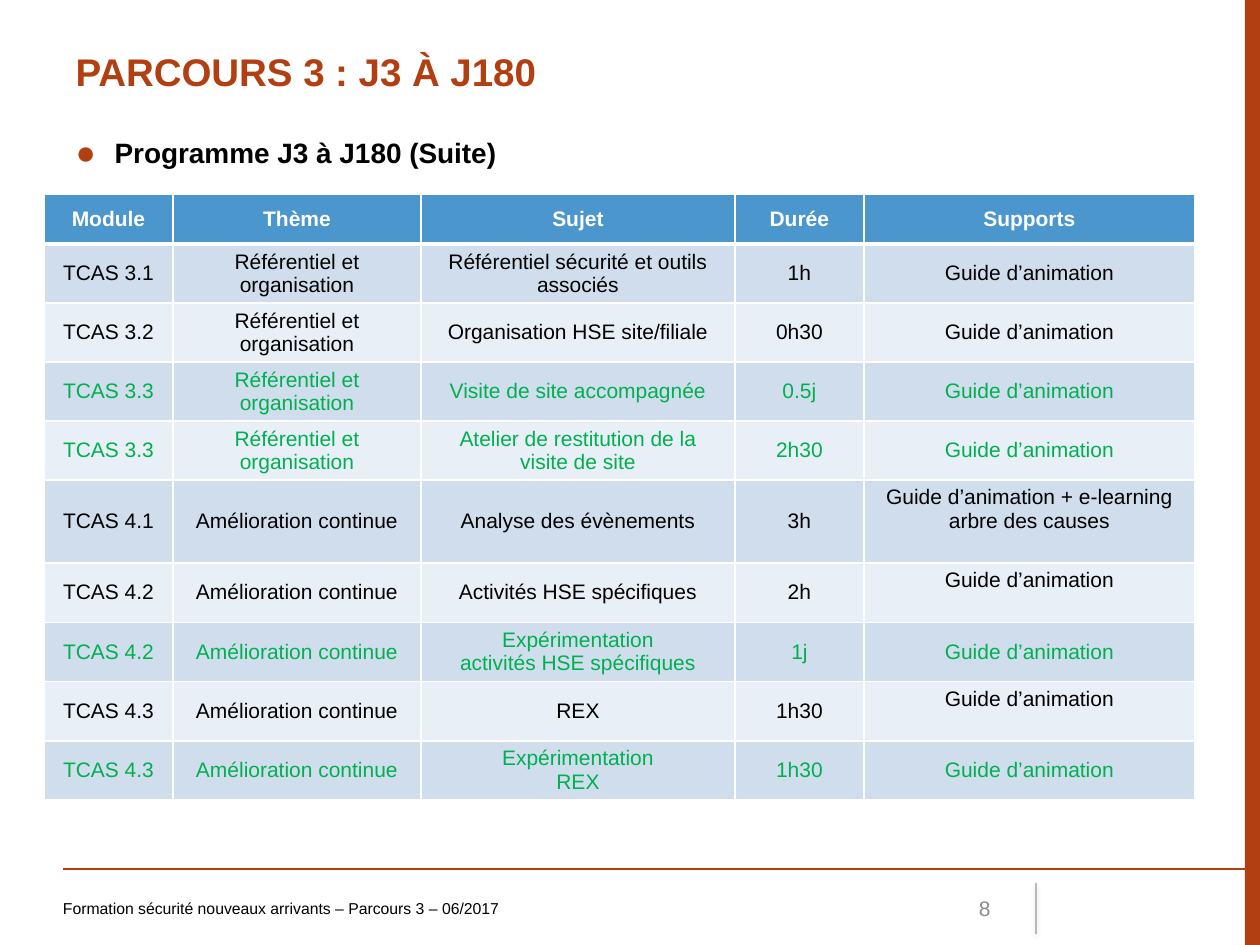
from dataclasses import dataclass

from lxml import etree
from pptx import Presentation
from pptx.dml.color import RGBColor
from pptx.enum.shapes import MSO_CONNECTOR, MSO_SHAPE
from pptx.enum.text import MSO_ANCHOR, MSO_AUTO_SIZE, PP_ALIGN
from pptx.oxml import parse_xml
from pptx.oxml.ns import nsdecls, qn
from pptx.util import Pt

PX = 914400 / 126
LEFT, CENTER, RIGHT = PP_ALIGN.LEFT, PP_ALIGN.CENTER, PP_ALIGN.RIGHT
TOP, MIDDLE = MSO_ANCHOR.TOP, MSO_ANCHOR.MIDDLE
NO_FIT = MSO_AUTO_SIZE.NONE
RECTANGLE, STRAIGHT = MSO_SHAPE.RECTANGLE, MSO_CONNECTOR.STRAIGHT


@dataclass(frozen=True)
class Theme:
    """Colours, font and type sizes of the deck."""
    font: str = "Arial"
    accent: str = "B23F12"
    ink: str = "000000"
    paper: str = "FFFFFF"
    muted: str = "8C8C8C"
    practice: str = "00B050"
    header: str = "4A96CD"
    bands: tuple = ("D0DDED", "E9EFF6")
    title_size: int = 22
    body_size: int = 16
    table_size: int = 12
    footer_size: int = 9


THEME = Theme()
COLUMNS = (129, 248, 314, 129, 331)
HEADER_HEIGHT, ROW_HEIGHT, TALL_ROW = 50, 59, 83
CELL_MARGIN, RAISED_MARGIN = 6, 30
HEADINGS = ("Module", "Thème", "Sujet", "Durée", "Supports")
REFERENCE, PROGRESS = "Référentiel et organisation", "Amélioration continue"
GUIDE = "Guide d’animation"
MODULES = (
    ("TCAS 3.1", REFERENCE, "Référentiel sécurité et outils associés", "1h", GUIDE),
    ("TCAS 3.2", REFERENCE, "Organisation HSE site/filiale", "0h30", GUIDE),
    ("TCAS 3.3", REFERENCE, "Visite de site accompagnée", "0.5j", GUIDE),
    ("TCAS 3.3", REFERENCE, "Atelier de restitution de la visite de site", "2h30", GUIDE),
    ("TCAS 4.1", PROGRESS, "Analyse des évènements", "3h",
     GUIDE + " + e-learning arbre des causes"),
    ("TCAS 4.2", PROGRESS, "Activités HSE spécifiques", "2h", GUIDE),
    ("TCAS 4.2", PROGRESS, "Expérimentation\nactivités HSE spécifiques", "1j", GUIDE),
    ("TCAS 4.3", PROGRESS, "REX", "1h30", GUIDE),
    ("TCAS 4.3", PROGRESS, "Expérimentation\nREX", "1h30", GUIDE),
)
PRACTICE_ROWS = {3, 4, 7, 9}
RAISED_ROWS = {5, 6, 8}
TALL_ROWS = {5}


def px(length):
    """Turn px into EMU."""
    return round(length * PX)


def rgb(color):
    """Turn a hex string into a colour."""
    return RGBColor.from_string(color)


def assign(target, values):
    """Set attributes from a dict of format values."""
    for name, value in values.items():
        setattr(target, name, value)


def write(frame, text, size, color, bold=False, align=LEFT):
    """Fill a text frame with evenly formatted paragraphs."""
    frame.text = text
    for para in frame.paragraphs:
        para.alignment = align
        for span in para.runs:
            assign(span.font, {"name": THEME.font, "size": Pt(size), "bold": bold})
            span.font.color.rgb = rgb(color)


def place(shape, box):
    """Move a shape to a box in px."""
    assign(shape, dict(zip(("left", "top", "width", "height"), map(px, box))))


def add_line(page, start, end, color, width, shadow=False):
    """Draw a straight rule, with a soft shadow if asked."""
    line = page.shapes.add_connector(STRAIGHT, *map(px, start + end))
    line.line.color.rgb = rgb(color)
    line.line.width = Pt(width)
    effects = etree.SubElement(line._element.spPr, qn("a:effectLst"))
    if shadow:
        effects.append(parse_xml(
            f'<a:outerShdw {nsdecls("a")} blurRad="{Pt(3.1)}" dist="{Pt(1.6)}" dir="5400000">'
            f'<a:srgbClr val="{color}"><a:alpha val="38000"/></a:srgbClr></a:outerShdw>'))
        tint = line._element.spPr.find(".//" + qn("a:srgbClr"))
        etree.SubElement(tint, qn("a:alpha"), val="70000")


def add_title(page, box):
    """Place the slide title."""
    title = page.shapes.title
    place(title, box)
    assign(title.text_frame, {"vertical_anchor": TOP, "auto_size": NO_FIT,
                              "word_wrap": True, "margin_top": px(10)})
    write(title.text_frame, "PARCOURS 3 : J3 À J180", THEME.title_size, THEME.accent, True)


def add_subtitle(page, box):
    """Place the bulleted programme line."""
    body = page.placeholders[1]
    place(body, box)
    assign(body.text_frame, {"vertical_anchor": TOP, "auto_size": NO_FIT,
                             "word_wrap": True, "margin_top": px(9)})
    write(body.text_frame, "Programme J3 à J180 (Suite)", THEME.body_size, THEME.ink, True)
    para = body.text_frame.paragraphs[0]
    assign(para, {"space_before": Pt(0), "space_after": Pt(3)})
    properties = para._p.get_or_add_pPr()
    assign_indent = {"marL": str(px(39)), "indent": str(px(-39))}
    for name, value in assign_indent.items():
        properties.set(name, value)
    color = etree.SubElement(properties, qn("a:buClr"))
    etree.SubElement(color, qn("a:srgbClr"), val=THEME.accent)
    etree.SubElement(properties, qn("a:buSzPct"), val="120000")
    etree.SubElement(properties, qn("a:buFont"), typeface=THEME.font)
    etree.SubElement(properties, qn("a:buChar"), char="●")


def add_borders(cell, row):
    """Rule a cell in white, thicker under the header."""
    widths = {"lnL": 1, "lnR": 1, "lnT": 3 if row == 1 else 1, "lnB": 3 if row == 0 else 1}
    for side, width in widths.items():
        cell._tc.get_or_add_tcPr().append(parse_xml(
            f'<a:{side} {nsdecls("a")} w="{Pt(width)}"><a:solidFill>'
            f'<a:srgbClr val="{THEME.paper}"/></a:solidFill></a:{side}>'))


def add_programme(page, box):
    """Place the table of modules."""
    rows = (HEADINGS,) + MODULES
    table = page.shapes.add_table(len(rows), len(COLUMNS), *map(px, box)).table
    for column, width in zip(table.columns, COLUMNS):
        column.width = px(width)
    for index, texts in enumerate(rows):
        heading = index == 0
        height = HEADER_HEIGHT if heading else TALL_ROW if index in TALL_ROWS else ROW_HEIGHT
        table.rows[index].height = px(height)
        fill = THEME.header if heading else THEME.bands[(index - 1) % 2]
        color = THEME.practice if index in PRACTICE_ROWS else THEME.ink
        for number, text in enumerate(texts):
            cell = table.cell(index, number)
            raised = index in RAISED_ROWS and number == len(COLUMNS) - 1
            bottom = RAISED_MARGIN if raised else CELL_MARGIN
            assign(cell, {"vertical_anchor": MIDDLE, "margin_top": px(CELL_MARGIN),
                          "margin_bottom": px(bottom)})
            add_borders(cell, index)
            cell.fill.solid()
            cell.fill.fore_color.rgb = rgb(fill)
            write(cell.text_frame, text, THEME.table_size,
                  THEME.paper if heading else color, heading, CENTER)


def add_note(page, box, text, size, color, align, inset):
    """Place one line of footer text."""
    note = page.shapes.add_textbox(*map(px, box))
    assign(note.text_frame, {"word_wrap": True, "vertical_anchor": MIDDLE,
                             "margin_left": px(inset)})
    write(note.text_frame, text, size, color, align=align)


def add_footer(page, box):
    """Place the rules, the footer text and the page number."""
    left, top, width, height = box
    add_line(page, (left, top), (left + width, top), THEME.accent, 0.75)
    add_line(page, (left + 973, top + 14), (left + 973, top + height), THEME.ink, 0.5, True)
    add_note(page, (left + 840, top + 14, 100, 50), "8",
             THEME.table_size, THEME.muted, RIGHT, 13)
    add_note(page, (left, top + 14, 766, 50),
             "Formation sécurité nouveaux arrivants – Parcours 3 – 06/2017",
             THEME.footer_size, THEME.ink, LEFT, 0)


def add_edge(page, box):
    """Place the coloured band on the page edge."""
    band = page.shapes.add_shape(RECTANGLE, *map(px, box))
    band.shadow.inherit = False
    band.fill.solid()
    band.fill.fore_color.rgb = rgb(THEME.accent)
    band.line.fill.background()


def main():
    """Build the deck."""
    deck = Presentation()
    assign(deck, {"slide_width": px(1260), "slide_height": px(945)})
    page = deck.slides.add_slide(deck.slide_layouts[1])
    add_edge(page, (1245, 0, 15, 945))
    add_title(page, (63, 38, 1133, 87))
    add_subtitle(page, (63, 127, 1133, 59))
    add_programme(page, (44, 194, sum(COLUMNS), 605))
    add_footer(page, (63, 869, 1197, 65))
    deck.save("out.pptx")


if __name__ == "__main__":
    main()
